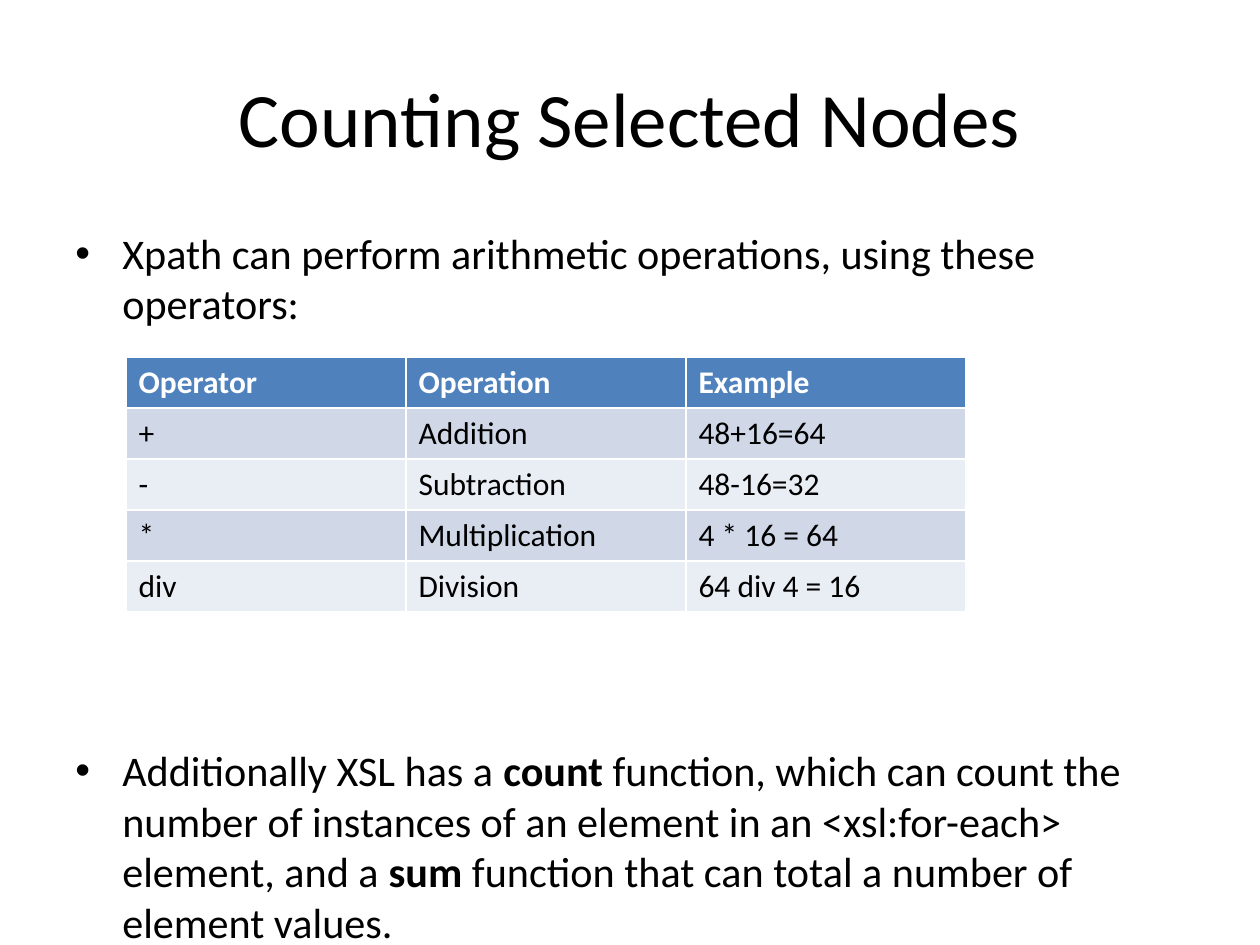
from pptx import Presentation
from pptx.dml.color import RGBColor
from pptx.enum.text import MSO_ANCHOR, PP_ALIGN
from pptx.oxml.ns import qn
from pptx.util import Pt
from lxml.etree import SubElement

PX = 914400 // 126
BLACK = RGBColor(0x00, 0x00, 0x00)
WHITE = RGBColor(0xFF, 0xFF, 0xFF)
HEADER = RGBColor(0x4F, 0x81, 0xBD)
BANDS = [RGBColor(0xE9, 0xED, 0xF4), RGBColor(0xD0, 0xD8, 0xE8)]


def add_text(p, text, size=24.1, bold=False, color=BLACK):
    r = p.add_run()
    r.text = text
    r.font.name = "Calibri"
    r.font.size = Pt(size)
    r.font.bold = bold
    r.font.color.rgb = color


prs = Presentation()
prs.slide_width = 1260 * PX
prs.slide_height = 945 * PX
s = prs.slides.add_slide(prs.slide_layouts[5])

# Title
title = s.shapes.title
title.left, title.top, title.width, title.height = [
    v * PX for v in (63, 38, 1134, 157)]
title.text_frame.vertical_anchor = MSO_ANCHOR.MIDDLE
p = title.text_frame.paragraphs[0]
p.alignment = PP_ALIGN.CENTER
add_text(p, "Counting Selected Nodes", size=44)

# Bullets: the space before the second one leaves room for the table
bullets = [
    (0, [("Xpath can perform arithmetic operations, using these operators:", False)]),
    (416, [("Additionally XSL has a ", False),
           ("count", True),
           (" function, which can count the number of instances of an element "
            "in an <xsl:for-each> element, and a ", False),
           ("sum", True),
           (" function that can total a number of element values.", False)]),
]
tf = s.shapes.add_textbox(63 * PX, 221 * PX, 1134 * PX, 624 * PX).text_frame
tf.word_wrap = True
for i, (gap, parts) in enumerate(bullets):
    p = tf.add_paragraph() if i else tf.paragraphs[0]
    p.space_before = gap * PX
    pPr = p._p.get_or_add_pPr()
    pPr.set("marL", str(47 * PX))
    pPr.set("indent", str(-47 * PX))
    SubElement(pPr, qn("a:buFont"), typeface="Arial")
    SubElement(pPr, qn("a:buChar"), char="•")
    for text, bold in parts:
        add_text(p, text, bold=bold)

# Operator table
rows = [
    ("Operator", "Operation", "Example"),
    ("+", "Addition", "48+16=64"),
    ("-", "Subtraction", "48-16=32"),
    ("*", "Multiplication", "4 * 16 = 64"),
    ("div", "Division", "64 div 4 = 16"),
]
table = s.shapes.add_table(len(rows), 3, 126 * PX, 357 * PX,
                           840 * PX, 255 * PX).table
for i, row in enumerate(rows):
    for j, text in enumerate(row):
        cell = table.cell(i, j)
        cell.fill.solid()
        cell.fill.fore_color.rgb = BANDS[i % 2] if i else HEADER
        add_text(cell.text_frame.paragraphs[0], text, size=18,
                 bold=i == 0, color=BLACK if i else WHITE)

prs.save("out.pptx")
